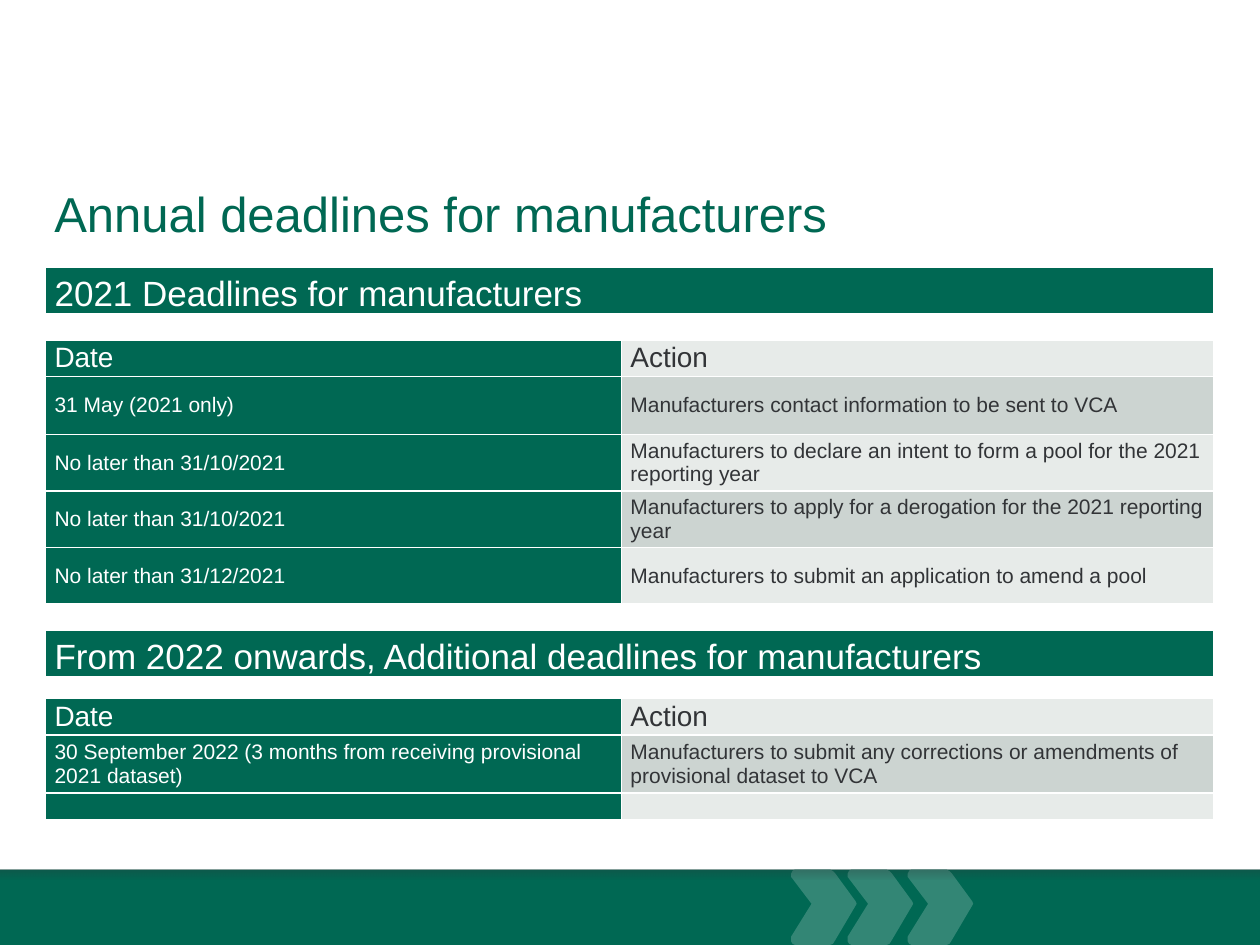
from dataclasses import dataclass

from lxml.etree import SubElement
from pptx import Presentation
from pptx.dml.color import RGBColor as RGB
from pptx.enum.shapes import MSO_SHAPE as Shape
from pptx.enum.text import MSO_ANCHOR as Anchor, PP_ALIGN as Align
from pptx.oxml import parse_xml
from pptx.oxml.ns import nsdecls, qn
from pptx.util import Cm, Pt


@dataclass(frozen=True)
class Theme:
    """Colours, type sizes and font of the deck."""
    green: str = "006853"
    mint: str = "338675"
    dark: str = "323437"
    white: str = "FFFFFF"
    light: str = "E7EBE9"
    grey: str = "CCD4D1"
    font: str = "Arial"
    title: int = 28
    band: int = 20
    head: int = 16
    body: int = 12
    gap: int = 8


CHEVRON = [(8, 0), (78, 0), (84, 3), (89, 8), (130, 64), (132, 69), (128, 76),
           (89, 142), (84, 150), (78, 152), (8, 152), (3, 150), (0, 145),
           (0, 135), (41, 69), (0, 15), (0, 8), (3, 2)]

SECTIONS = [
    ("2021 Deadlines for manufacturers", [
        ("Date", "Action"),
        ("31 May (2021 only)",
         "Manufacturers contact information to be sent to VCA"),
        ("No later than 31/10/2021",
         "Manufacturers to declare an intent to form a pool for the 2021 reporting year"),
        ("No later than 31/10/2021",
         "Manufacturers to apply for a derogation for the 2021 reporting year"),
        ("No later than 31/12/2021",
         "Manufacturers to submit an application to amend a pool")]),
    ("From 2022 onwards, Additional deadlines for manufacturers", [
        ("Date", "Action"),
        ("30 September 2022 (3 months from receiving provisional 2021 dataset)",
         "Manufacturers to submit any corrections or amendments of provisional dataset to VCA"),
        ("", "")]),
]
COLS = [11.61, 11.94]
ROWS = [0.94, 0.53, 0.74, 1.17, 1.14, 1.14, 1.14, 0.53, 0.94, 0.43, 0.74, 1.17, 0.53]


class Deck:
    """Holds the theme and the current slide."""

    def __init__(self, prs, theme):
        """Add a title-only slide."""
        self.t = theme
        self.s = prs.slides.add_slide(prs.slide_layouts[5])

    def style(self, p, size, color):
        """Format every run of a paragraph."""
        for r in p.runs:
            r.font.name, r.font.size = self.t.font, Pt(size)
            r.font.color.rgb = RGB.from_string(color)

    def paint(self, sp, color):
        """Give a shape a plain fill without line or shadow."""
        sp.shadow.inherit = False
        sp.line.fill.background()
        sp.fill.solid()
        sp.fill.fore_color.rgb = RGB.from_string(color)

    def title(self, text, x, y, w, h):
        """Place and fill the title placeholder."""
        sp = self.s.shapes.title
        sp.left, sp.top, sp.width, sp.height = Cm(x), Cm(y), Cm(w), Cm(h)
        tf = sp.text_frame
        tf.text = text
        tf.vertical_anchor = Anchor.TOP
        p = tf.paragraphs[0]
        p.alignment, p.line_spacing = Align.LEFT, 0.9
        self.style(p, self.t.title, self.t.green)

    def bar(self, x, y, w, h, color):
        """Draw a filled rectangle."""
        sp = self.s.shapes.add_shape(Shape.RECTANGLE, Cm(x), Cm(y), Cm(w), Cm(h))
        self.paint(sp, color)
        return sp

    def shade(self, x, y, w, h):
        """Draw a strip that fades out downwards."""
        fill = self.bar(x, y, w, h, self.t.dark).fill
        fill.gradient()
        fill.gradient_angle = 270
        for stop, alpha in zip(fill.gradient_stops, (30000, 0)):
            stop.color.rgb = RGB.from_string(self.t.dark)
            clr = stop._gs.find(qn("a:srgbClr"))
            SubElement(clr, qn("a:alpha"), val=str(alpha))

    def chevrons(self, x, y, offsets):
        """Draw a row of chevrons, measured in hundredths of a centimetre."""
        fb = None
        for dx in offsets:
            pts = [(x + dx + px, y + py) for px, py in CHEVRON]
            if fb is None:
                fb = self.s.shapes.build_freeform(*pts[0], scale=Cm(1) / 100)
            else:
                fb.move_to(*pts[0])
            fb.add_line_segments(pts[1:], close=True)
        self.paint(fb.convert_to_shape(), self.t.mint)

    def cell(self, c, text="", size=None, color=None, fill=None,
             anchor=Anchor.MIDDLE):
        """Fill one table cell and rule its edges in white."""
        c.margin_left = c.margin_right = Cm(0.18)
        c.margin_top = c.margin_bottom = 0
        c.vertical_anchor = anchor
        c.text_frame.text = text
        p = c.text_frame.paragraphs[0]
        if text:
            self.style(p, size, color)
        else:
            SubElement(p._p, qn("a:endParaRPr"), sz=str(self.t.gap * 100))
        if fill:
            c.fill.solid()
            c.fill.fore_color.rgb = RGB.from_string(fill)
        else:
            c.fill.background()
        for i, edge in enumerate("LRTB"):
            c._tc.tcPr.insert(i, parse_xml(
                f'<a:ln{edge} {nsdecls("a")} w="{Pt(1)}"><a:solidFill>'
                f'<a:srgbClr val="{self.t.white}"/></a:solidFill></a:ln{edge}>'))

    def table(self, x, y, cols, rows, sections):
        """Draw the sections, each with a band, a gap and its rows."""
        t = self.t
        tbl = self.s.shapes.add_table(len(rows), len(cols), Cm(x), Cm(y),
                                      Cm(sum(cols)), Cm(sum(rows))).table
        tbl.first_row = tbl.horz_banding = False
        for col, w in zip(tbl.columns, cols):
            col.width = Cm(w)
        for row, h in zip(tbl.rows, rows):
            row.height = Cm(h)
        i = 0
        for n, (band, lines) in enumerate(sections):
            if n:
                self.gap(tbl, i)
                i += 1
            tbl.cell(i, 0).merge(tbl.cell(i, 1))
            self.cell(tbl.cell(i, 0), band, t.band, t.white, t.green, Anchor.BOTTOM)
            self.gap(tbl, i + 1)
            i += 2
            for k, (date, action) in enumerate(lines):
                size = t.body if k else t.head
                self.cell(tbl.cell(i, 0), date, size, t.white, t.green)
                self.cell(tbl.cell(i, 1), action, size, t.dark,
                          t.grey if k % 2 else t.light)
                i += 1

    def gap(self, tbl, i):
        """Leave a table row empty."""
        for c in tbl.rows[i].cells:
            self.cell(c)


def main():
    """Build and save the slide."""
    prs = Presentation()
    prs.slide_width, prs.slide_height = Cm(25.4), Cm(19.05)
    d = Deck(prs, Theme())
    d.bar(0, 17.53, 25.4, 1.52, d.t.green)
    d.chevrons(1595, 1753, (0, 114, 235))
    d.shade(0, 17.53, 25.4, 0.2)
    d.title("Annual deadlines for manufacturers", 0.84, 3.71, 24, 1.96)
    d.table(0.92, 5.38, COLS, ROWS, SECTIONS)
    prs.save("out.pptx")


if __name__ == "__main__":
    main()
